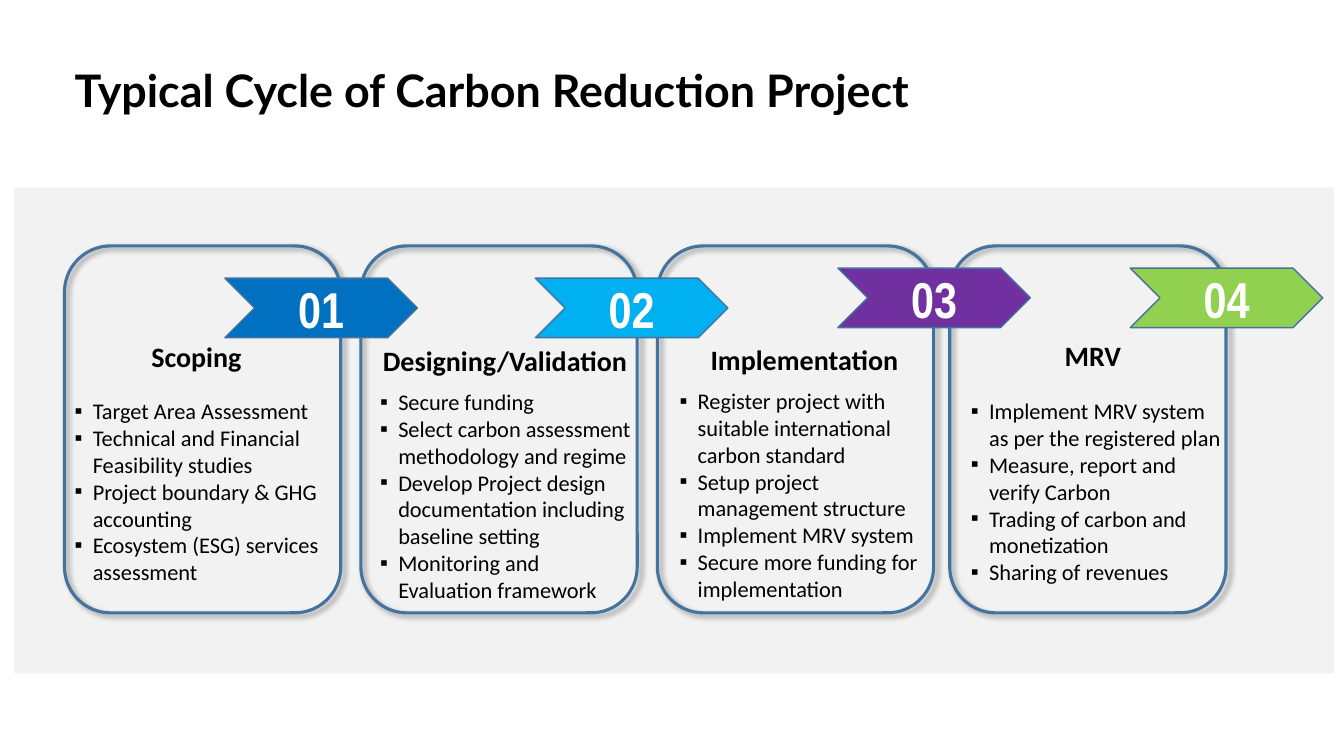
from lxml import etree
from pptx import Presentation, util as u
from pptx.dml.color import RGBColor
from pptx.enum import shapes, text
from pptx.oxml import parse_xml
from pptx.oxml.ns import nsdecls, qn

COLORS = {"panel": "F2F2F2", "outline": "43739E", "ink": "000000", "white": "FFFFFF",
          "blue": "0070C0", "sky": "00B0F0", "purple": "7030A0", "green": "92D050"}
FORMATS = {
    "title": {"name": "Lato", "size": u.Pt(32), "bold": True, "color": "ink"},
    "number": {"name": "Arial Narrow", "size": u.Pt(36), "bold": True, "color": "white"},
    "heading": {"name": "Calibri", "size": u.Pt(20), "bold": True, "color": "ink"},
    "bullet": {"name": "Calibri", "size": u.Pt(16), "bold": False, "color": "ink"},
}
CARD_W, CARD_H, CARD_TOP = 274, 364, 244
STAGES = [
    {"name": "Scoping", "color": "blue", "card": 64, "arrow": (223, 276),
     "heading": (61, 332), "list": (64, 389, 199),
     "items": ["Target Area Assessment", "Technical and Financial Feasibility studies",
               "Project boundary & GHG accounting", "Ecosystem (ESG) services assessment"]},
    {"name": "Designing/Validation", "color": "sky", "card": 358, "arrow": (531, 276),
     "heading": (367, 336), "list": (367, 380, 226),
     "items": ["Secure funding", "Select carbon assessment methodology and regime",
               "Develop Project design documentation including baseline setting",
               "Monitoring and Evaluation framework"]},
    {"name": "Implementation", "color": "purple", "card": 652, "arrow": (831, 266),
     "heading": (664, 335), "list": (664, 379, 226),
     "items": ["Register project with suitable international carbon standard",
               "Setup project management structure", "Implement MRV system",
               "Secure more funding for implementation"]},
    {"name": "MRV", "color": "green", "card": 942, "arrow": (1121, 266),
     "heading": (950, 331), "list": (953, 389, 199),
     "items": ["Implement MRV system as per the registered plan",
               "Measure, report and verify Carbon", "Trading of carbon and monetization",
               "Sharing of revenues"]},
]


def px(n):
    return u.Emu(n * 9144)


def rgb(name):
    return RGBColor.from_string(COLORS[name])


class Deck:
    """Holds the style and the current slide, and draws each kind of element."""

    def __init__(self, width, height):
        self.prs = Presentation()
        self.prs.slide_width, self.prs.slide_height = px(width), px(height)
        self.s = self.prs.slides.add_slide(self.prs.slide_layouts.get_by_name("Comparison"))
        self.bodies = [ph for ph in self.s.placeholders if ph != self.s.shapes.title]

    def place(self, sp, *box):
        for key, value in zip(("left", "top", "width", "height"), box):
            setattr(sp, key, px(value))

    def add_text(self, p, content, style):
        r = p.add_run()
        r.text = content
        for key, value in FORMATS[style].items():
            if key == "color":
                r.font.color.rgb = rgb(value)
            else:
                setattr(r.font, key, value)

    def frame(self, sp, anchor, inset=5):
        tf = sp.text_frame
        settings = {"word_wrap": True, "auto_size": text.MSO_AUTO_SIZE.NONE,
                    "vertical_anchor": anchor, "margin_left": px(10), "margin_right": px(10),
                    "margin_top": px(inset), "margin_bottom": px(inset)}
        for key, value in settings.items():
            setattr(tf, key, value)
        return tf

    def title(self, content, *box):
        sp = self.s.shapes.title
        self.place(sp, *box)
        p = self.frame(sp, text.MSO_ANCHOR.BOTTOM, 0).paragraphs[0]
        p.alignment, p.line_spacing = text.PP_ALIGN.LEFT, 0.9
        self.add_text(p, content, "title")

    def shape(self, kind, box, fill=None, line=None, width=1):
        sp = self.s.shapes.add_shape(kind, *map(px, box))
        sp.shadow.inherit = False
        if fill:
            sp.fill.solid()
            sp.fill.fore_color.rgb = rgb(fill)
        else:
            sp.fill.background()
        if line:
            sp.line.color.rgb, sp.line.width = rgb(line), u.Pt(width)
        else:
            sp.line.fill.background()
        return sp

    def panel(self, *box):
        sp = self.shape(shapes.MSO_SHAPE.RECTANGLE, box, "panel")
        self.s.shapes._spTree.insert(2, sp._element)

    def card(self, *box):
        sp = self.shape(shapes.MSO_SHAPE.ROUNDED_RECTANGLE, box, None, "outline", 2.25)
        effects = sp._element.spPr.find(qn("a:effectLst"))
        effects.append(parse_xml(
            f'<a:outerShdw {nsdecls("a")} blurRad="{u.Pt(4)}" dist="{u.Pt(3)}" dir="2700000" '
            f'algn="tl" rotWithShape="0"><a:srgbClr val="{COLORS["ink"]}">'
            '<a:alpha val="40000"/></a:srgbClr></a:outerShdw>'))

    def arrow(self, number, fill, *box):
        sp = self.shape(shapes.MSO_SHAPE.CHEVRON, box, fill, "outline")
        p = self.frame(sp, text.MSO_ANCHOR.MIDDLE).paragraphs[0]
        p.alignment = text.PP_ALIGN.CENTER
        self.add_text(p, number, "number")

    def heading(self, content, *box):
        sp = self.s.shapes.add_textbox(*map(px, box))
        p = self.frame(sp, text.MSO_ANCHOR.TOP).paragraphs[0]
        p.alignment = text.PP_ALIGN.CENTER
        self.add_text(p, f"{content} ", "heading")

    def bullets(self, sp, items, *box):
        self.place(sp, *box)
        tf = self.frame(sp, text.MSO_ANCHOR.TOP)
        for i, item in enumerate(items):
            p = tf.add_paragraph() if i else tf.paragraphs[0]
            p.space_before = u.Pt(0)
            pPr = p._p.get_or_add_pPr()
            pPr.set("marL", str(px(18)))
            pPr.set("indent", str(-px(18)))
            etree.SubElement(pPr, qn("a:buFont"), typeface="Arial")
            etree.SubElement(pPr, qn("a:buChar"), char="▪")
            self.add_text(p, item, "bullet")


def main():
    deck = Deck(1333, 750)
    deck.title("Typical Cycle of Carbon Reduction Project", 64, 55, 1197, 61)
    deck.panel(14, 186, 1309, 482)
    for stage in STAGES:
        deck.card(stage["card"], CARD_TOP, CARD_W, CARD_H)
    for i, (stage, body) in enumerate(zip(STAGES, deck.bodies), 1):
        deck.arrow(f"{i:02}", stage["color"], *stage["arrow"], 191, 59)
        deck.heading(stage["name"], *stage["heading"], CARD_W, 44)
        left, top, height = stage["list"]
        deck.bullets(body, stage["items"], left, top, CARD_W, height)
    deck.prs.save("out.pptx")


if __name__ == "__main__":
    main()
